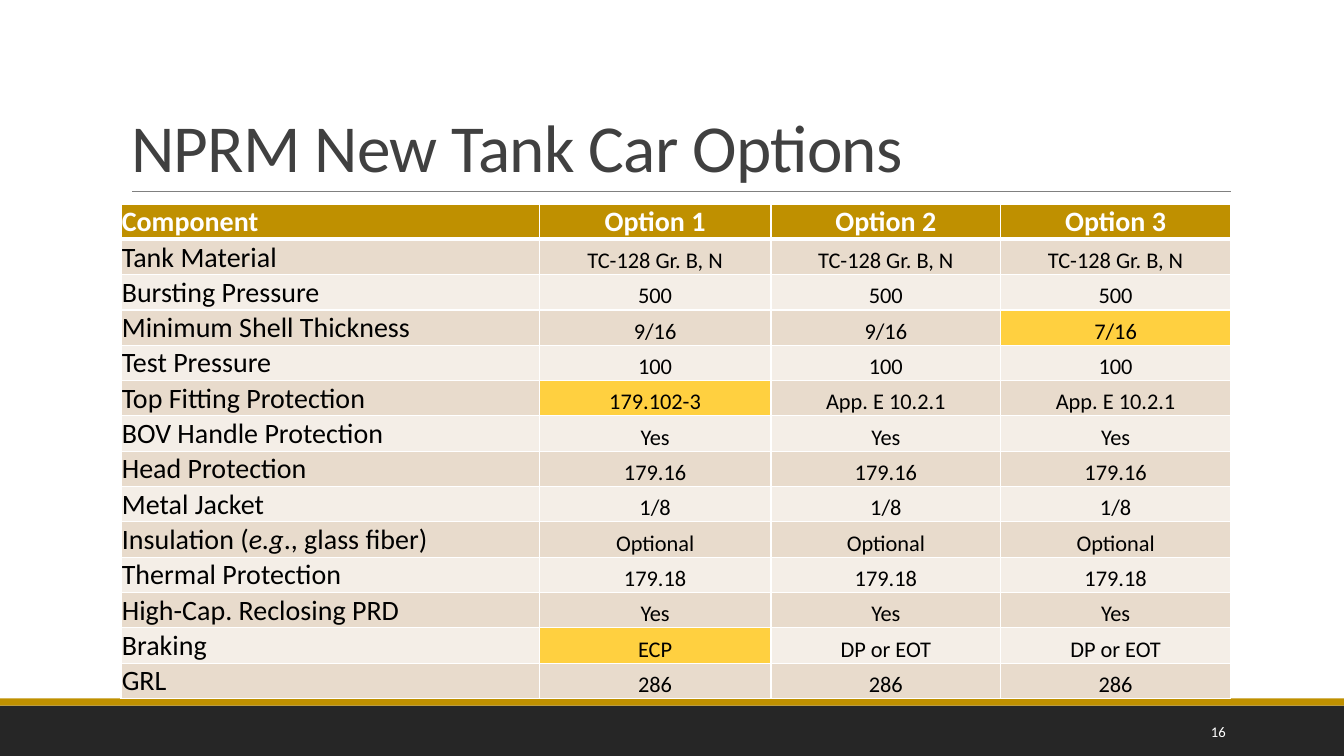
"""Build a slide comparing three options for new tank cars."""
from dataclasses import dataclass

from lxml import etree
from pptx import Presentation
from pptx.dml.color import RGBColor
from pptx.enum.shapes import MSO_CONNECTOR, MSO_SHAPE
from pptx.enum.text import MSO_ANCHOR, MSO_AUTO_SIZE, PP_ALIGN
from pptx.oxml.ns import qn
from pptx.util import Cm, Pt

RECT = MSO_SHAPE.RECTANGLE
LINE = MSO_CONNECTOR.STRAIGHT
LEFT, MID, RIGHT = PP_ALIGN.LEFT, PP_ALIGN.CENTER, PP_ALIGN.RIGHT
BASE, CORE = MSO_ANCHOR.BOTTOM, MSO_ANCHOR.MIDDLE
FIXED = MSO_AUTO_SIZE.NONE
TITLE_ONLY = 5
WIDE, HIGH = 33.87, 19.05

HEAD = ("Component", "Option 1", "Option 2", "Option 3")
ROWS = (
    ("Tank Material", "TC-128 Gr. B, N"),
    ("Bursting Pressure", "500"),
    ("Minimum Shell Thickness", "9/16", "9/16", "7/16"),
    ("Test Pressure", "100"),
    ("Top Fitting Protection", "179.102-3", "App. E 10.2.1", "App. E 10.2.1"),
    ("BOV Handle Protection", "Yes"),
    ("Head Protection", "179.16"),
    ("Metal Jacket", "1/8"),
    ("Insulation (*e.g*., glass fiber)", "Optional"),
    ("Thermal Protection", "179.18"),
    ("High-Cap. Reclosing PRD", "Yes"),
    ("Braking", "ECP", "DP or EOT", "DP or EOT"),
    ("GRL", "286"),
)
MARKS = {(3, 3), (5, 1), (12, 1)}


@dataclass(frozen=True)
class Theme:
    """Colours, font and type sizes."""
    font: str = "Calibri"
    dark: str = "262626"
    gold: str = "BF9000"
    rule: str = "808080"
    ink: str = "404040"
    text: str = "000000"
    white: str = "FFFFFF"
    bands: tuple = ("F4EEE7", "E8DBCC")
    mark: str = "FFD040"
    title: float = 48
    label: float = 20
    value: float = 16
    page: float = 10.5


class Deck:
    """Hold the style and the current slide."""

    def __init__(self, theme):
        """Open a title-only slide."""
        self.theme = theme
        self.file = Presentation()
        self.file.slide_width, self.file.slide_height = Cm(WIDE), Cm(HIGH)
        self.slide = self.file.slides.add_slide(
            self.file.slide_layouts[TITLE_ONLY])

    def style(self, para, size, color, align=LEFT, bold=False):
        """Format a paragraph and its runs."""
        para.alignment = align
        for run in para.runs:
            font = run.font
            font.name, font.size, font.bold = self.theme.font, Pt(size), bold
            font.color.rgb = RGBColor.from_string(color)

    def title(self, text, box):
        """Place and format the title."""
        shape = self.slide.shapes.title
        shape.left, shape.top, shape.width, shape.height = map(Cm, box)
        frame = shape.text_frame
        frame.text = text
        frame.auto_size, frame.vertical_anchor = FIXED, BASE
        frame.word_wrap = True
        para = frame.paragraphs[0]
        para.line_spacing = 0.85
        self.style(para, self.theme.title, self.theme.ink)
        para.runs[0].font._element.set("spc", "-50")

    def band(self, box, color):
        """Draw a plain filled bar."""
        shape = self.slide.shapes.add_shape(RECT, *map(Cm, box))
        shape.shadow.inherit = False
        shape.fill.solid()
        shape.fill.fore_color.rgb = RGBColor.from_string(color)
        shape.line.fill.background()

    def rule(self, ends, color):
        """Draw a thin line."""
        line = self.slide.shapes.add_connector(LINE, *map(Cm, ends))
        line.line.color.rgb = RGBColor.from_string(color)
        line.line.width = Pt(0.5)
        etree.SubElement(line._element.spPr, qn("a:effectLst"))

    def note(self, text, box):
        """Add the page number."""
        frame = self.slide.shapes.add_textbox(*map(Cm, box)).text_frame
        frame.text = text
        frame.word_wrap, frame.vertical_anchor = True, CORE
        self.style(frame.paragraphs[0], self.theme.page, self.theme.white,
                   RIGHT)

    def edge(self, cell, top, base):
        """Set white borders around a cell."""
        props = cell._tc.get_or_add_tcPr()
        sides = (("a:lnL", 1), ("a:lnR", 1), ("a:lnT", top), ("a:lnB", base))
        for at, (tag, width) in enumerate(sides):
            line = etree.Element(qn(tag), w=str(Pt(width)))
            fill = etree.SubElement(line, qn("a:solidFill"))
            etree.SubElement(fill, qn("a:srgbClr"), val=self.theme.white)
            props.insert(at, line)

    def cell(self, cell, text, row, col):
        """Fill and format one table cell."""
        look = self.theme
        first = row == 0
        cell.margin_left = cell.margin_right = cell.margin_top = Cm(0.02)
        cell.margin_bottom = 0
        cell.vertical_anchor = BASE
        para = cell.text_frame.paragraphs[0]
        parts = text.split("*")
        for part in parts:
            para.add_run().text = part
        self.style(para, look.label if first or col == 0 else look.value,
                   look.white if first else look.text,
                   MID if col else LEFT, first)
        for run in para.runs[1::2]:
            run.font.italic = True
        fill = look.gold if first else look.bands[row % 2]
        if (row, col) in MARKS:
            fill = look.mark
        cell.fill.solid()
        cell.fill.fore_color.rgb = RGBColor.from_string(fill)
        self.edge(cell, 3 if row == 1 else 1, 3 if first else 1)

    def table(self, rows, box, widths):
        """Add the table of options."""
        grid = self.slide.shapes.add_table(
            len(rows), len(widths), *map(Cm, box)).table
        grid.first_row = grid.horz_banding = False
        for col, width in zip(grid.columns, widths):
            col.width = Cm(width)
        for row, (name, *vals) in enumerate(rows):
            grid.rows[row].height = Cm(box[3] / len(rows))
            if len(vals) == 1:
                vals *= 3
            for col, text in enumerate((name, *vals)):
                self.cell(grid.cell(row, col), text, row, col)


def main():
    """Build and save the slide."""
    look = Theme()
    deck = Deck(look)
    deck.band((0, 17.78, WIDE, 1.27), look.dark)
    deck.band((0, 17.6, WIDE, 0.18), look.gold)
    deck.rule((3.33, 4.83, 31.01, 4.83), look.rule)
    deck.title("NPRM New Tank Car Options", (3.05, 0.79, 27.94, 4.04))
    deck.table((HEAD, *ROWS), (3.05, 5.14, 27.96, 12.46),
               (10.54, 5.84, 5.79, 5.79))
    deck.note("16", (27.51, 17.93, 3.63, 1.02))
    deck.file.save("out.pptx")


if __name__ == "__main__":
    main()
